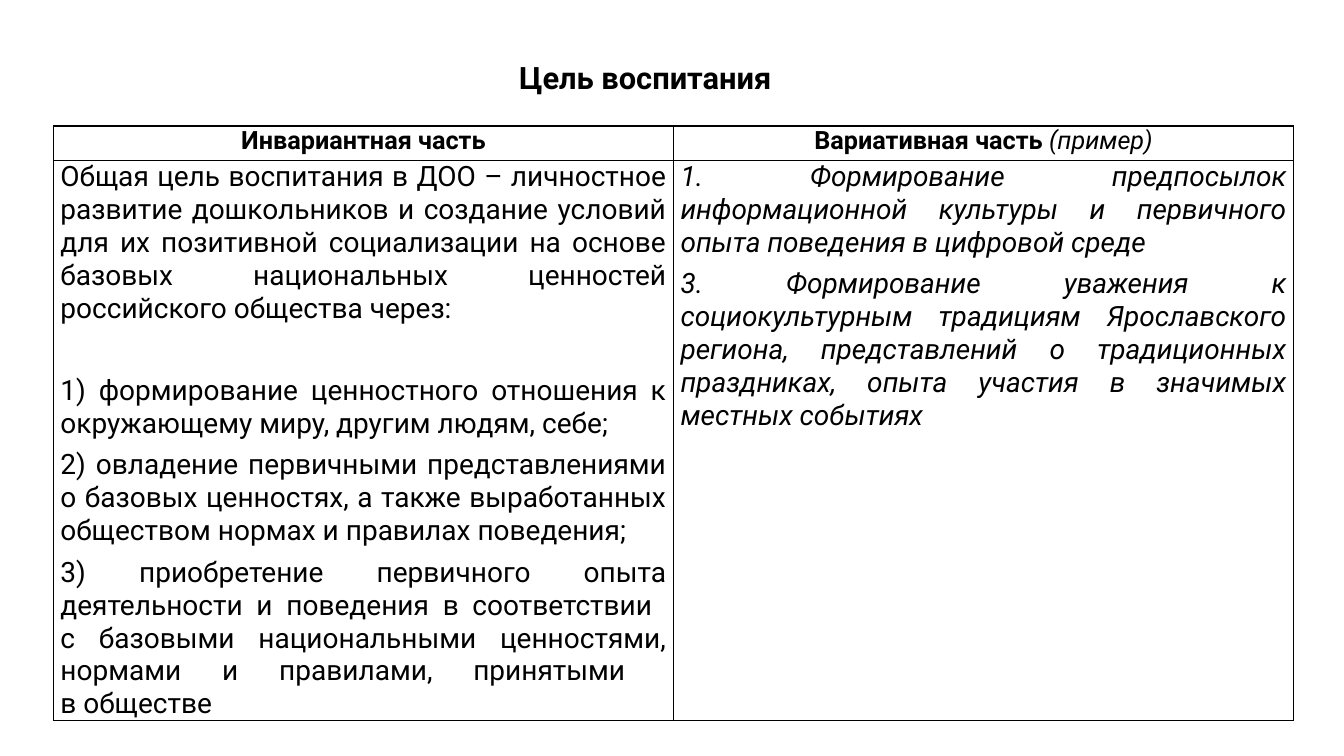
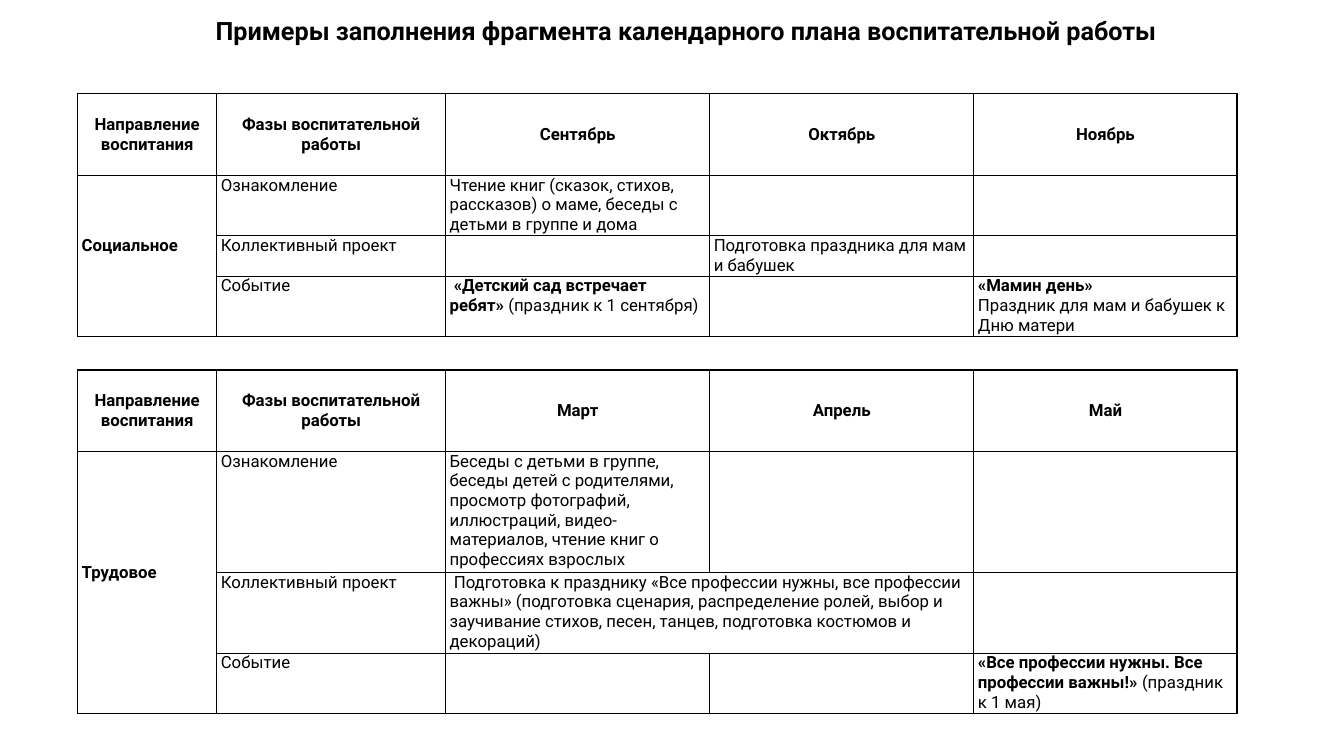
from lxml import etree
from pptx import Presentation
from pptx.dml.color import RGBColor
from pptx.enum.text import MSO_ANCHOR as ANCHOR, MSO_AUTO_SIZE as AUTO, PP_ALIGN as ALIGN
from pptx.oxml.ns import qn
from pptx.util import Inches, Pt

FONT = "Roboto"
BLACK = "000000"
LINE_WIDTH = Pt(1)
PLAN_COLS = [1.38, 2.27, 2.62, 2.62, 2.61]
PLAN_HEAD = ["Направление воспитания", "Фазы воспитательной работы"]
PHASES = ["Ознакомление", "Коллективный проект", "Событие"]

GOALS = [
    "Общая цель воспитания в ДОО – личностное развитие дошкольников и создание условий "
    "для их позитивной социализации на основе базовых национальных ценностей "
    "российского общества через:",
    "1) формирование ценностного отношения к окружающему миру, другим людям, себе;",
    "2) овладение первичными представлениями о базовых ценностях, а также выработанных "
    "обществом нормах и правилах поведения;",
    "3) приобретение первичного опыта деятельности и поведения в соответствии \n"
    "с базовыми национальными ценностями, нормами и правилами, принятыми \nв обществе",
]
EXAMPLES = [
    "1. Формирование предпосылок информационной культуры и первичного опыта поведения "
    "в цифровой среде",
    "3. Формирование уважения к социокультурным традициям Ярославского региона, "
    "представлений о традиционных праздниках, опыта участия в значимых местных событиях",
]
# Month cells by (phase, month); each paragraph is a list of (text, bold) runs
AUTUMN = {
    (0, 0): [[("Чтение книг (сказок, стихов, рассказов) о маме, беседы с детьми "
               "в группе и дома", False)]],
    (1, 1): [[("Подготовка праздника для мам и бабушек", False)]],
    (2, 0): [[(" «Детский сад встречает ребят» ", True), ("(праздник к 1 сентября)", False)]],
    (2, 2): [[("«Мамин день»", True)],
             [("Праздник для мам и бабушек к Дню матери", False)]],
}
SPRING = {
    (0, 0): [[("Беседы с детьми в группе, беседы детей с родителями, просмотр фотографий, "
               "иллюстраций, видео-материалов, чтение книг о профессиях взрослых", False)]],
    (1, 0): [[(" Подготовка к празднику «Все профессии нужны, все профессии важны» "
               "(подготовка сценария, распределение ролей, выбор и заучивание стихов, "
               "песен, танцев, подготовка костюмов и декораций)", False)]],
    (2, 2): [[("«Все профессии нужны. Все профессии важны!» ", True),
              ("(праздник к 1 мая)", False)]],
}


def rgb(color):
    return RGBColor.from_string(color)


def add_text(p, text, size=12, bold=False, italic=False, color=BLACK):
    """Append text to a paragraph; a newline becomes a line break."""
    for i, line in enumerate(text.split("\n")):
        if i:
            p.add_line_break()
        r = p.add_run()
        r.text = line
        r.font.name = FONT
        r.font.size = Pt(size)
        r.font.bold = bold
        r.font.italic = italic
        r.font.color.rgb = rgb(color)


def next_paragraph(tf):
    """Return the first paragraph while it is empty, otherwise a new one."""
    return tf.add_paragraph() if tf.text else tf.paragraphs[0]


def add_titled_slide(prs, text, box, size, line_spacing=1):
    s = prs.slides.add_slide(prs.slide_layouts[5])
    title = s.shapes.title
    title.left, title.top, title.width, title.height = map(Inches, box)
    tf = title.text_frame
    tf.auto_size = AUTO.NONE
    tf.word_wrap = True
    p = tf.paragraphs[0]
    p.alignment = ALIGN.CENTER
    p.line_spacing = line_spacing
    add_text(p, text, size, bold=True)
    return s


def set_borders(cell, color=BLACK):
    tc_pr = cell._tc.get_or_add_tcPr()
    for side in ("lnL", "lnR", "lnT", "lnB"):
        ln = etree.SubElement(tc_pr, qn(f"a:{side}"), w=str(LINE_WIDTH))
        fill = etree.SubElement(ln, qn("a:solidFill"))
        etree.SubElement(fill, qn("a:srgbClr"), val=color)


def add_grid(s, left, top, cols, rows, inset):
    """Add an unfilled table with black borders."""
    tbl = s.shapes.add_table(len(rows), len(cols), Inches(left), Inches(top),
                             Inches(sum(cols)), Inches(sum(rows))).table
    tbl.first_row = tbl.horz_banding = False
    for col, width in zip(tbl.columns, cols):
        col.width = Inches(width)
    for row, height in zip(tbl.rows, rows):
        row.height = Inches(height)
    for cell in tbl.iter_cells():
        cell.margin_left = cell.margin_right = Inches(inset)
        cell.margin_top = cell.margin_bottom = 0
        set_borders(cell)
        cell.fill.background()
    return tbl


def fill_cell(cell, text, align=ALIGN.LEFT, anchor=ANCHOR.TOP, **fmt):
    cell.vertical_anchor = anchor
    p = next_paragraph(cell.text_frame)
    p.alignment = align
    add_text(p, text, **fmt)
    return p


def add_plan(s, top, rows, direction, months, events):
    tbl = add_grid(s, 0.77, top, PLAN_COLS, rows, 0.04)
    for c, head in enumerate(PLAN_HEAD + months):
        fill_cell(tbl.cell(0, c), head, ALIGN.CENTER, ANCHOR.MIDDLE, bold=True)
    side = tbl.cell(1, 0)
    side.merge(tbl.cell(3, 0))
    side.margin_bottom = Inches(0.2)
    fill_cell(side, direction, anchor=ANCHOR.MIDDLE, bold=True)
    for r, phase in enumerate(PHASES, 1):
        fill_cell(tbl.cell(r, 1), phase)
    for (phase, month), paragraphs in events.items():
        tf = tbl.cell(phase + 1, month + 2).text_frame
        for runs in paragraphs:
            p = next_paragraph(tf)
            for text, bold in runs:
                add_text(p, text, bold=bold)
    return tbl


def build_goal_slide(prs):
    s = add_titled_slide(prs, "Цель воспитания", (4.56, 0.52, 3.68, 0.46), 22, 1.07)
    tbl = add_grid(s, 0.53, 1.25, [6.15, 6.15], [0.34, 5.55], 0.07)
    fill_cell(tbl.cell(0, 0), "Инвариантная часть", ALIGN.CENTER, size=18, bold=True)
    p = fill_cell(tbl.cell(0, 1), "Вариативная часть ", ALIGN.CENTER, size=18, bold=True)
    add_text(p, "(пример)", 18, italic=True)
    for c, items in enumerate((GOALS, EXAMPLES)):
        for i, text in enumerate(items):
            p = fill_cell(tbl.cell(1, c), text, ALIGN.JUSTIFY, size=20, italic=c == 1)
            # The list of goals stands apart from its lead-in
            p.space_before = Pt(35.5 if (c, i) == (0, 1) else 6)


def build_plan_slide(prs):
    s = add_titled_slide(
        prs, "Примеры заполнения фрагмента календарного плана воспитательной работы",
        (0.92, 0.1, 11.77, 0.4), 18)
    add_plan(s, 0.93, [0.81, 0.6, 0.4, 0.6], "Социальное",
             ["Сентябрь", "Октябрь", "Ноябрь"], AUTUMN)
    spring = add_plan(s, 3.67, [0.81, 1.2, 0.8, 0.6], "Трудовое",
                      ["Март", "Апрель", "Май"], SPRING)
    spring.cell(2, 2).merge(spring.cell(2, 3))


def main():
    prs = Presentation()
    prs.slide_width, prs.slide_height = Inches(13.33), Inches(7.5)
    build_goal_slide(prs)
    build_plan_slide(prs)
    prs.save("out.pptx")


if __name__ == "__main__":
    main()
